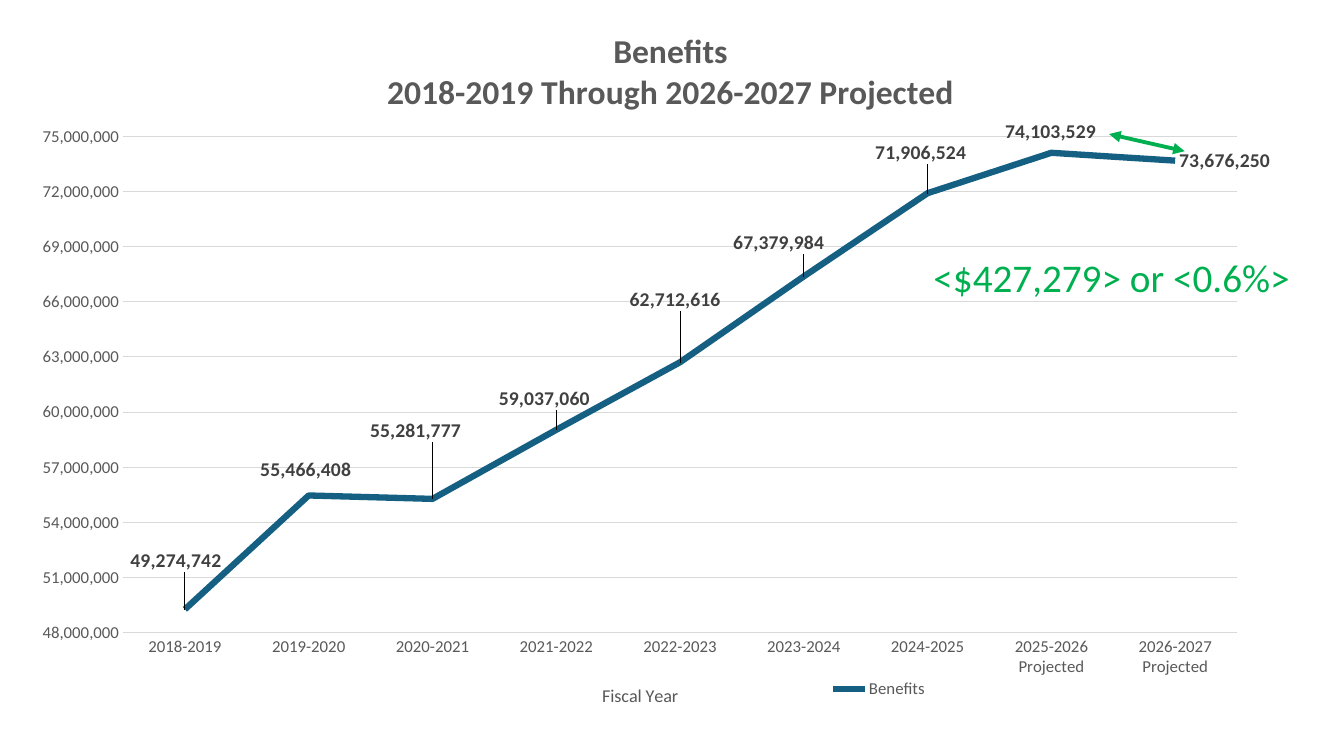
import pptx
import pptx.chart.data
import pptx.dml.color
import pptx.enum.chart
import pptx.enum.shapes
import pptx.oxml
import pptx.oxml.ns
import pptx.util
from pptx.util import Inches

COLORS = {"line": "156082", "grid": "D9D9D9", "gray": "595959",
          "label": "404040", "green": "00B050"}
FONT = "Calibri"
WIDE, HIGH = 12.98, 7  # chart size in inches
COSTS = {
    "2018-2019": 49274742, "2019-2020": 55466408, "2020-2021": 55281777,
    "2021-2022": 59037060, "2022-2023": 62712616, "2023-2024": 67379984,
    "2024-2025": 71906524, "2025-2026 Projected": 74103529,
    "2026-2027 Projected": 73676250,
}
# Label shifts in inches from the spot right of each point
SHIFTS = [(-0.58, -0.49), (-0.52, -0.26), (-0.66, -0.68), (-0.61, -0.31),
          (-0.54, -0.63), (-0.74, -0.34), (-0.56, -0.41), (-0.5, -0.21)]


def rgb(name):
    return pptx.dml.color.RGBColor.from_string(COLORS[name])


def style(font, size, color, bold=False):
    font.name = FONT
    font.size = pptx.util.Pt(size)
    font.bold = bold
    font.color.rgb = rgb(color)


def stroke(line, color, width):
    line.color.rgb = rgb(color)
    line.width = pptx.util.Pt(width)


def write(frame, lines, size, color, bold=False):
    for i, text in enumerate(lines):
        para = frame.add_paragraph() if i else frame.paragraphs[0]
        run = para.add_run()
        run.text = text
        style(run.font, size, color, bold)


def node(tag, **attrs):
    item = pptx.oxml.parse_xml(f"<{tag} {pptx.oxml.ns.nsdecls(tag[0])}/>")
    for key, value in attrs.items():
        item.set(key, str(value))
    return item


def place(parent, index, mode, x, y, w=None, h=None):
    """Give a chart part a manual layout, in inches of the chart."""
    for old in parent.findall(pptx.oxml.ns.qn("c:layout")):
        parent.remove(old)
    layout, manual = node("c:layout"), node("c:manualLayout")
    if w:
        manual.append(node("c:layoutTarget", val="inner"))
    if mode:
        manual.append(node("c:xMode", val=mode))
        manual.append(node("c:yMode", val=mode))
    for key, size, full in (("x", x, WIDE), ("y", y, HIGH),
                            ("w", w, WIDE), ("h", h, HIGH)):
        if size is not None:
            manual.append(node(f"c:{key}", val=round(size / full, 4)))
    layout.append(manual)
    parent.insert(index, layout)


def format_axes(chart):
    none = pptx.enum.chart.XL_TICK_MARK.NONE
    years, money = chart.category_axis, chart.value_axis
    for axis in (years, money):
        axis.major_tick_mark = axis.minor_tick_mark = none
        style(axis.tick_labels.font, 12, "gray")
    stroke(years.format.line, "grid", 0.75)
    years.has_title = True
    title = years.axis_title
    write(title.text_frame, ["Fiscal Year"], 13, "gray")
    place(title._element, 1, "edge", 5.78, 6.73)

    money.minimum_scale, money.maximum_scale = 48000000, 76000000
    money.major_unit = 3000000
    money.tick_labels.number_format = "#,##0"
    money.tick_labels.number_format_is_linked = False
    money.format.line.fill.background()
    stroke(money.major_gridlines.format.line, "grid", 0.75)


def add_labels(series):
    right = pptx.enum.chart.XL_LABEL_POSITION.RIGHT
    labels = series.data_labels
    labels.show_value = True
    labels.number_format = "#,##0"
    labels.number_format_is_linked = False
    labels.position = right
    style(labels.font, 14, "label", True)
    for i in range(len(SHIFTS)):
        label = series.points[i].data_label
        style(label.font, 14, "label", True)
        label.position = right
    for item, (x, y) in zip(series._element.xpath("c:dLbls/c:dLbl"), SHIFTS):
        item.insert(1, node("c:numFmt", formatCode="#,##0", sourceLinked=0))
        place(item, 1, None, x, y)


def add_costs(slide):
    data = pptx.chart.data.CategoryChartData(number_format="#,##0")
    data.categories = list(COSTS)
    data.add_series("Benefits", list(COSTS.values()))
    chart = slide.shapes.add_chart(
        pptx.enum.chart.XL_CHART_TYPE.LINE, Inches(0.16), Inches(0.08),
        Inches(WIDE), Inches(HIGH), data).chart
    style(chart.font, 10, "gray")
    chart.has_title = True
    write(chart.chart_title.text_frame,
          ["Benefits", "2018-2019 Through 2026-2027 Projected"],
          24, "gray", True)
    place(chart._chartSpace.chart.plotArea, 0, "edge", 1.06, 1.1, 11.05, 5.15)
    format_axes(chart)

    # Legend
    chart.has_legend = True
    chart.legend.position = pptx.enum.chart.XL_LEGEND_POSITION.BOTTOM
    chart.legend.include_in_layout = False
    style(chart.legend.font, 12, "gray")
    place(chart.legend._element, 1, "edge", 8.05, 6.67)

    # Line and its labels
    plot = chart.plots[0]
    plot.vary_by_categories = False
    series = plot.series[0]
    series.smooth = False
    stroke(series.format.line, "line", 4.5)
    add_labels(series)


def add_arrow(slide, x1, y1, x2, y2):
    arrow = slide.shapes.add_connector(
        pptx.enum.shapes.MSO_CONNECTOR.STRAIGHT,
        Inches(x1), Inches(y1), Inches(x2), Inches(y2))
    stroke(arrow.line, "green", 2.75)
    line = arrow.line._get_or_add_ln()
    line.append(node("a:headEnd", type="triangle"))
    line.append(node("a:tailEnd", type="triangle"))
    arrow._element.spPr.append(node("a:effectLst"))


def add_note(slide, x, y, w, h, text):
    box = slide.shapes.add_textbox(Inches(x), Inches(y), Inches(w), Inches(h))
    box.text_frame.word_wrap = False
    write(box.text_frame, [text], 28, "green")


def main():
    deck = pptx.Presentation()
    deck.slide_width, deck.slide_height = Inches(13.33), Inches(7.5)
    slide = deck.slides.add_slide(deck.slide_layouts[6])
    add_costs(slide)
    # Change in the last year
    add_arrow(slide, 11, 1.33, 11.75, 1.5)
    add_note(slide, 9.16, 2.46, 3.79, 0.57, "<$427,279> or <0.6%>")
    deck.save("out.pptx")


if __name__ == "__main__":
    main()
